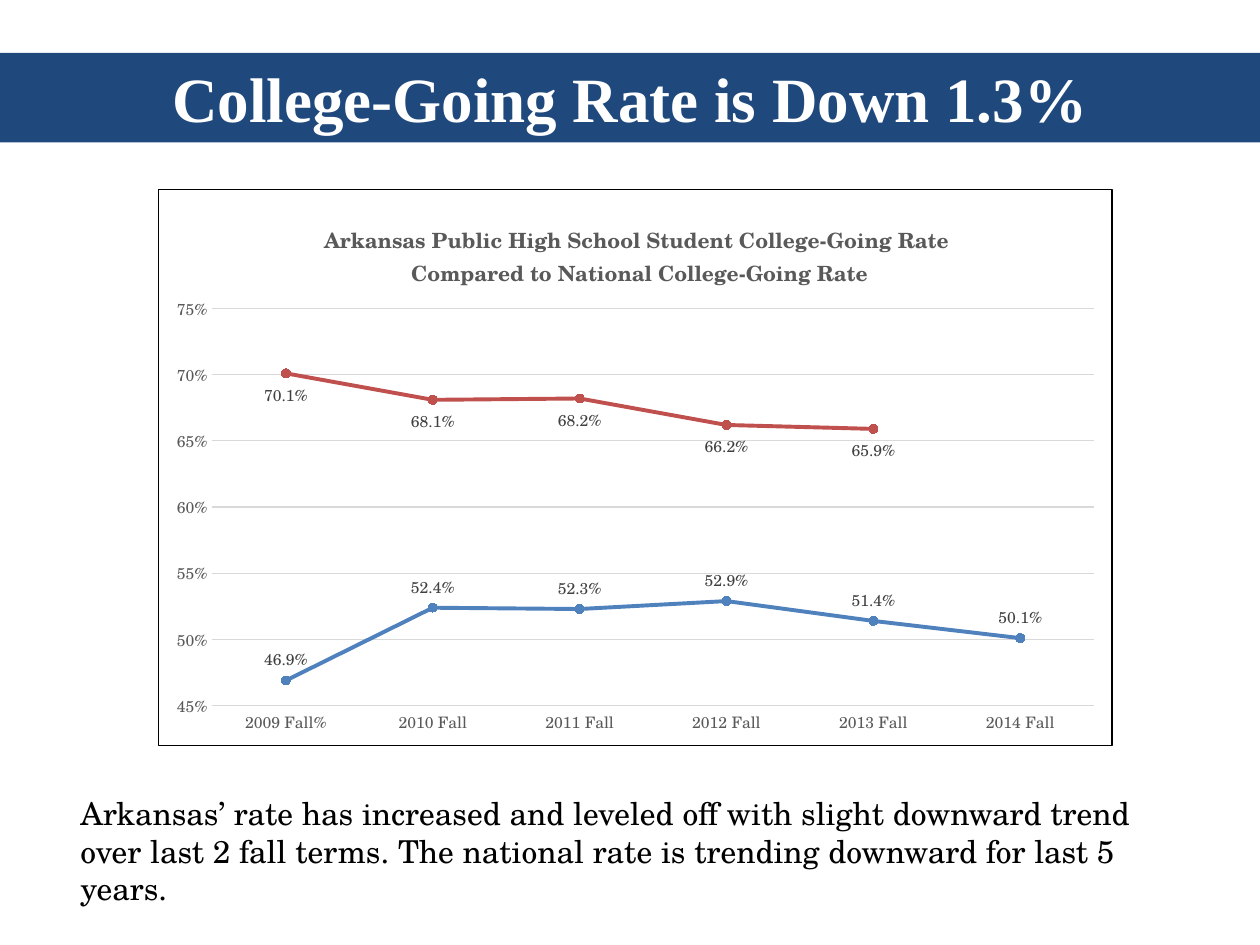
from lxml import etree
from pptx import Presentation
from pptx.chart.data import CategoryChartData
from pptx.dml.color import RGBColor
from pptx.enum.chart import XL_CHART_TYPE, XL_LABEL_POSITION, XL_MARKER_STYLE, XL_TICK_MARK
from pptx.enum.shapes import MSO_SHAPE
from pptx.enum.text import MSO_ANCHOR, PP_ALIGN
from pptx.oxml import parse_xml
from pptx.oxml.ns import nsdecls, qn
from pptx.util import Inches, Pt

NAVY = RGBColor(0x1F, 0x49, 0x7D)
WHITE = RGBColor(0xFF, 0xFF, 0xFF)
BLACK = RGBColor(0x00, 0x00, 0x00)
GRID = RGBColor(0xD9, 0xD9, 0xD9)
AXIS_TEXT = RGBColor(0x59, 0x59, 0x59)
LABEL_TEXT = RGBColor(0x40, 0x40, 0x40)
BLUE = RGBColor(0x4F, 0x81, 0xBD)
RED = RGBColor(0xC0, 0x50, 0x4D)
BODY_FONT = "TeX Gyre Schola"


def write_text(para, text, font=BODY_FONT, size=18, color=BLACK, bold=False, align=None):
    para.alignment = align
    span = para.add_run()
    span.text = text
    span.font.name, span.font.size, span.font.bold = font, Pt(size), bold
    span.font.color.rgb = color


def set_layout(parent, index, **fractions):
    """Place a chart part by fractions of the chart's size."""
    for old in parent.findall(qn("c:layout")):
        parent.remove(old)
    layout = parse_xml(f"<c:layout {nsdecls('c')}><c:manualLayout/></c:layout>")
    for name, value in fractions.items():
        etree.SubElement(layout[0], qn(f"c:{name}")).set("val", str(value))
    parent.insert(index, layout)


deck = Presentation()
deck.slide_width, deck.slide_height = Inches(10), Inches(7.5)
page = deck.slides.add_slide(deck.slide_layouts[6])

# Title band
band = page.shapes.add_shape(MSO_SHAPE.RECTANGLE, 0, Inches(0.42), Inches(10), Inches(0.71))
band.shadow.inherit = False
band.fill.solid()
band.fill.fore_color.rgb = NAVY
band.line.fill.background()
band.text_frame.word_wrap = True
band.text_frame.vertical_anchor = MSO_ANCHOR.TOP
write_text(band.text_frame.paragraphs[0], "College-Going Rate is Down 1.3%",
           font="Times New Roman", size=36, color=WHITE, bold=True, align=PP_ALIGN.CENTER)

# Summary
summary = page.shapes.add_textbox(Inches(0.54), Inches(6.25), Inches(8.92), Inches(0.71))
summary.text_frame.word_wrap = True
write_text(summary.text_frame.paragraphs[0],
           "Arkansas’ rate has increased and leveled off with slight downward trend over last "
           "2 fall terms. The national rate is trending downward for last 5 years.")

# Chart data
data = CategoryChartData(number_format="0.0%")
data.categories = ["2009 Fall%"] + [f"{year} Fall" for year in range(2010, 2015)]
data.add_series("Series 1", [0.469, 0.524, 0.523, 0.529, 0.514, 0.501])
data.add_series("Series 2", [0.701, 0.681, 0.682, 0.662, 0.659, None])
chart = page.shapes.add_chart(XL_CHART_TYPE.LINE_MARKERS, Inches(1.25), Inches(1.5),
                              Inches(7.58), Inches(4.42), data).chart
chart.has_legend = False
chart.font.name, chart.font.size = BODY_FONT, Pt(10)
chart.font.color.rgb = BLACK

# Chart title
title_frame = chart.chart_title.text_frame
title_lines = ["Arkansas Public High School Student College-Going Rate ",
               "Compared to National College-Going Rate"]
for para, line in zip([title_frame.paragraphs[0], title_frame.add_paragraph()], title_lines):
    para.line_spacing = 1.25
    write_text(para, line, size=12, color=AXIS_TEXT, bold=True, align=PP_ALIGN.CENTER)
chart.chart_title.include_in_layout = False
set_layout(chart.chart_title._element, 1, xMode="edge", yMode="edge", x=0.17, y=0.05)

# Plot area and outer border
plot_area = chart._chartSpace.chart.plotArea
set_layout(plot_area, 0, layoutTarget="inner", xMode="edge", yMode="edge",
           x=0.057, y=0.214, w=0.924, h=0.715)
border = parse_xml(
    f'<c:spPr {nsdecls("c", "a")}><a:noFill/><a:ln w="{Pt(0.75)}"><a:solidFill>'
    f'<a:srgbClr val="{BLACK}"/></a:solidFill></a:ln></c:spPr>')
chart._chartSpace.find(qn("c:txPr")).addprevious(border)

# Axes
for axis in (chart.category_axis, chart.value_axis):
    axis.major_tick_mark = axis.minor_tick_mark = XL_TICK_MARK.NONE
    font = axis.tick_labels.font
    font.name, font.size = BODY_FONT, Pt(9)
    font.color.rgb = AXIS_TEXT
values = chart.value_axis
values.minimum_scale, values.maximum_scale, values.major_unit = 0.45, 0.75, 0.05
values.tick_labels.number_format = "0%"
values.tick_labels.number_format_is_linked = False
values.format.line.fill.background()
values.has_major_gridlines = True
for line in (chart.category_axis.format.line, values.major_gridlines.format.line):
    line.color.rgb = GRID
    line.width = Pt(0.75)

# Series lines, markers and value labels
styles = [(BLUE, XL_LABEL_POSITION.ABOVE), (RED, XL_LABEL_POSITION.BELOW)]
for series, (color, position) in zip(chart.plots[0].series, styles):
    series.smooth = False
    series.format.line.color.rgb = color
    series.format.line.width = Pt(2.25)
    marker = series.marker
    marker.style, marker.size = XL_MARKER_STYLE.CIRCLE, 5
    marker.format.fill.solid()
    marker.format.fill.fore_color.rgb = color
    marker.format.line.color.rgb = color
    labels = series.data_labels
    labels.show_value = True
    labels.position = position
    labels.number_format, labels.number_format_is_linked = "0.0%", False
    labels.font.name, labels.font.size = BODY_FONT, Pt(9)
    labels.font.color.rgb = LABEL_TEXT
chart.plots[0].vary_by_categories = False

deck.save("out.pptx")
